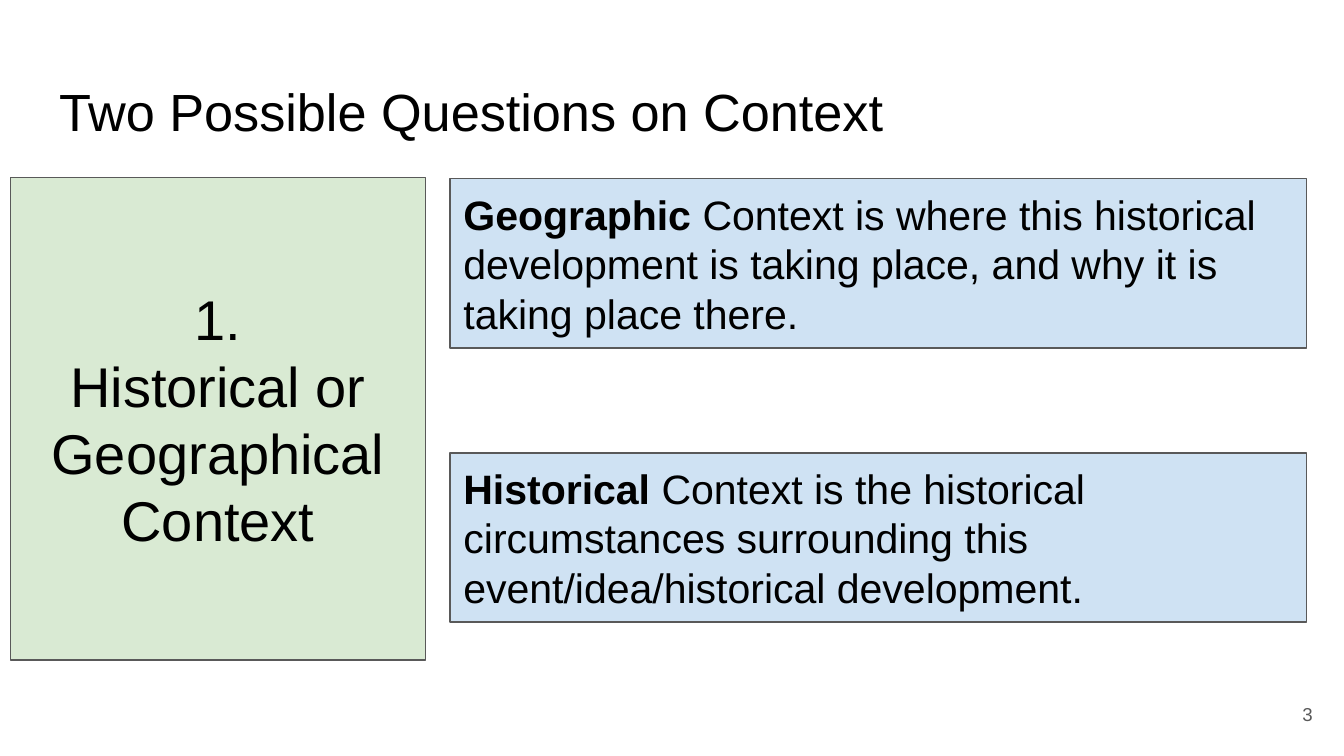
"""Build a slide on two kinds of context question."""
from pptx import Presentation
from pptx.dml.color import RGBColor as Rgb
from pptx.enum.shapes import MSO_SHAPE as Kind
from pptx.enum.text import MSO_ANCHOR as Anchor, PP_ALIGN as Align
from pptx.util import Pt

PX = 4572
INK = {"text": "000000", "gray": "595959", "green": "D9EAD3", "blue": "CFE2F3"}


def write(shape, paras, size, color="text", align=Align.LEFT, anchor=Anchor.MIDDLE):
    frame = shape.text_frame
    frame.word_wrap = True
    frame.vertical_anchor = anchor
    frame.margin_left = frame.margin_right = 20 * PX
    frame.margin_top = frame.margin_bottom = 20 * PX
    for i, runs in enumerate(paras):
        para = frame.add_paragraph() if i else frame.paragraphs[0]
        para.alignment = align
        para.line_spacing = 1.0
        for text, bold in runs:
            run = para.add_run()
            run.text = text
            font = run.font
            font.name, font.size, font.bold = "Arial", Pt(size), bold
            font.color.rgb = Rgb.from_string(INK[color])


def add_box(area, fill):
    box = slide.shapes.add_shape(Kind.RECTANGLE, *[n * PX for n in area])
    box.shadow.inherit = False
    box.fill.solid()
    box.fill.fore_color.rgb = Rgb.from_string(INK[fill])
    box.line.color.rgb = Rgb.from_string(INK["gray"])
    box.line.width = Pt(0.75)
    return box


deck = Presentation()
deck.slide_width, deck.slide_height = 2000 * PX, 1125 * PX
slide = deck.slides.add_slide(deck.slide_layouts[5])

title = slide.shapes.title
title.left, title.top, title.width, title.height = [n * PX for n in (68, 98, 1864, 126)]
write(title, [[("Two Possible Questions on Context", False)]], 28, anchor=Anchor.TOP)

page = slide.shapes.add_textbox(*[n * PX for n in (1853, 1020, 120, 86)])
write(page, [[("3", False)]], 10, color="gray", align=Align.RIGHT)

topic = add_box((16, 264, 617, 718), "green")
lines = ["1.", "Historical or Geographical Context"]
write(topic, [[(line, False)] for line in lines], 30, align=Align.CENTER)

terms = [
    ("Geographic", " Context is where this historical development is taking place, "
                   "and why it is taking place there."),
    ("Historical", " Context is the historical circumstances surrounding this "
                   "event/idea/historical development."),
]
for i, (term, rest) in enumerate(terms):
    box = add_box((670, 266 + 408 * i, 1274, 252), "blue")
    write(box, [[(term, True), (rest, False)]], 22)

deck.save("out.pptx")
